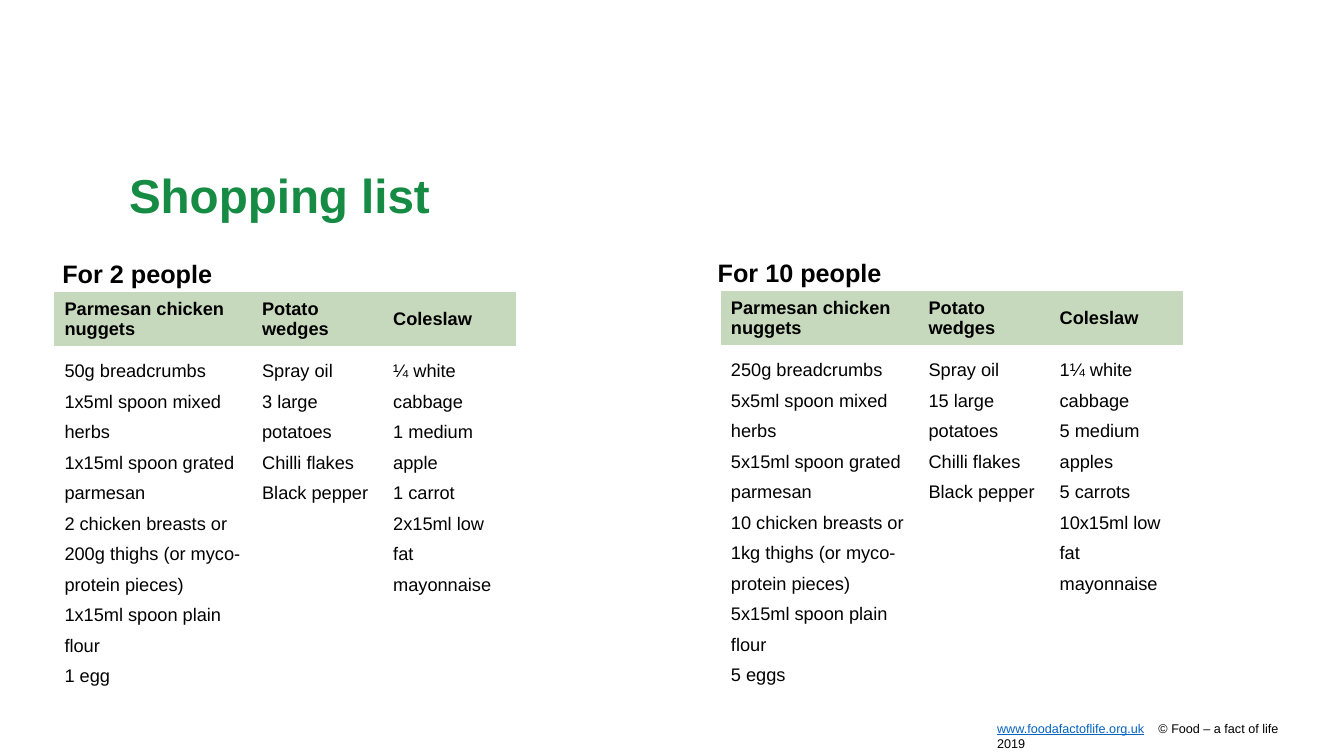
from dataclasses import dataclass

import pptx
import pptx.dml.color
import pptx.enum.text
import pptx.oxml
import pptx.oxml.ns
import pptx.util

EMU_PER_PX = 9144  # 100 px to the inch
NO_STYLE_NO_GRID = "{2D5ABB26-0587-4C30-8999-92F81FD0307C}"


@dataclass(frozen=True)
class Theme:
    font: str = "Arial"
    title: str = "158B44"
    text: str = "000000"
    link: str = "0563C1"
    header_fill: str = "C7D9BD"
    body_fill: str = "FFFFFF"
    title_pt: int = 34
    heading_pt: int = 18
    table_pt: int = 13
    footer_pt: int = 9


@dataclass(frozen=True)
class Box:
    x: int
    y: int
    w: int
    h: int


@dataclass(frozen=True)
class ShoppingList:
    heading: str
    heading_box: Box
    table_box: Box
    columns: tuple[tuple[str, ...], ...]


THEME = Theme()
DISHES = ("Parmesan chicken nuggets", "Potato wedges", "Coleslaw")
COLUMN_WIDTHS = (196, 130, 132)
ROW_HEIGHTS = (53, 375)

LISTS = (
    ShoppingList(
        "For 2 people", Box(52, 251, 409, 40), Box(54, 290, 458, 428),
        (
            ("50g breadcrumbs", "1x5ml spoon mixed herbs",
             "1x15ml spoon grated parmesan",
             "2 chicken breasts or 200g thighs (or myco-protein pieces)",
             "1x15ml spoon plain flour", "1 egg"),
            ("Spray oil", "3 large potatoes", "Chilli flakes", "Black pepper"),
            ("¼ white cabbage", "1 medium apple", "1 carrot",
             "2x15ml low fat mayonnaise"),
        ),
    ),
    ShoppingList(
        "For 10 people", Box(702, 250, 409, 40), Box(715, 289, 458, 428),
        (
            ("250g breadcrumbs", "5x5ml spoon mixed herbs",
             "5x15ml spoon grated parmesan",
             "10 chicken breasts or 1kg thighs (or myco-protein pieces)",
             "5x15ml spoon plain flour", "5 eggs"),
            ("Spray oil", "15 large potatoes", "Chilli flakes", "Black pepper"),
            ("1¼ white cabbage", "5 medium apples", "5 carrots",
             "10x15ml low fat mayonnaise"),
        ),
    ),
)


def px(n: int) -> pptx.util.Emu:
    return pptx.util.Emu(n * EMU_PER_PX)


def rgb(value: str) -> pptx.dml.color.RGBColor:
    return pptx.dml.color.RGBColor.from_string(value)


def set_font(font, size: int, color: str, bold: bool = False) -> None:
    font.name = THEME.font
    font.size = pptx.util.Pt(size)
    font.bold = bold
    font.color.rgb = rgb(color)


def clear_margins(tf) -> None:
    tf.margin_left = tf.margin_top = tf.margin_right = tf.margin_bottom = 0


def add_text_box(slide, box: Box):
    sp = slide.shapes.add_textbox(px(box.x), px(box.y), px(box.w), px(box.h))
    return sp.text_frame


def add_title(slide, text: str, box: Box) -> None:
    sp = slide.shapes.title
    sp.left, sp.top, sp.width, sp.height = map(px, (box.x, box.y, box.w, box.h))
    tf = sp.text_frame
    tf.text = text
    clear_margins(tf)
    tf.word_wrap = True
    tf.auto_size = pptx.enum.text.MSO_AUTO_SIZE.NONE
    tf.vertical_anchor = pptx.enum.text.MSO_ANCHOR.TOP
    p = tf.paragraphs[0]
    p.alignment = pptx.enum.text.PP_ALIGN.LEFT
    p.line_spacing = 0.9
    set_font(p.font, THEME.title_pt, THEME.title, True)


def fill_cell(cell, lines: tuple[str, ...], header: bool) -> None:
    cell.fill.solid()
    cell.fill.fore_color.rgb = rgb(THEME.header_fill if header else THEME.body_fill)
    if header:
        cell.vertical_anchor = pptx.enum.text.MSO_ANCHOR.MIDDLE
    cell.text = "\n".join(lines)
    for p in cell.text_frame.paragraphs:
        if not header:
            p.line_spacing = 1.5
        set_font(p.font, THEME.table_pt, THEME.text, header)


def add_shopping_list(slide, item: ShoppingList) -> None:
    # Heading
    tf = add_text_box(slide, item.heading_box)
    tf.word_wrap = True
    tf.text = item.heading
    set_font(tf.paragraphs[0].font, THEME.heading_pt, THEME.text, True)

    # Ingredients by dish
    box = item.table_box
    frame = slide.shapes.add_table(2, len(DISHES), px(box.x), px(box.y),
                                   px(box.w), px(box.h))
    style = frame.element.find(".//" + pptx.oxml.ns.qn("a:tableStyleId"))
    style.text = NO_STYLE_NO_GRID
    table = frame.table
    table.horz_banding = False
    for row, height in zip(table.rows, ROW_HEIGHTS):
        row.height = px(height)
    for i, width in enumerate(COLUMN_WIDTHS):
        table.columns[i].width = px(width)
        fill_cell(table.cell(0, i), (DISHES[i],), True)
        fill_cell(table.cell(1, i), item.columns[i], False)


def add_footer(slide, address: str, notice: str, box: Box, tab: int) -> None:
    tf = add_text_box(slide, box)
    clear_margins(tf)
    tf.word_wrap = False
    p = tf.paragraphs[0]
    # Tab stop that sets the gap between address and notice
    p_pr = p._p.get_or_add_pPr()
    tabs = pptx.oxml.ns.qn("a:tabLst")
    stop = p_pr.makeelement(tabs, {})
    stop.append(stop.makeelement(pptx.oxml.ns.qn("a:tab"),
                                 {"pos": str(px(tab)), "algn": "l"}))
    p_pr.append(stop)
    r = p.add_run()
    r.text = address
    set_font(r.font, THEME.footer_pt, THEME.link)
    r.font.underline = True
    r = p.add_run()
    r.text = "\t" + notice
    set_font(r.font, THEME.footer_pt, THEME.text)


def main() -> None:
    prs = pptx.Presentation()
    prs.slide_width, prs.slide_height = px(1333), px(750)
    slide = prs.slides.add_slide(prs.slide_layouts.get_by_name("Title Only"))
    add_title(slide, "Shopping list", Box(128, 171, 1063, 79))
    for item in LISTS:
        add_shopping_list(slide, item)
    add_footer(slide, "www.foodafactoflife.org.uk",
               "© Food – a fact of life 2019", Box(989, 715, 310, 15), 160)
    prs.save("out.pptx")


if __name__ == "__main__":
    main()
